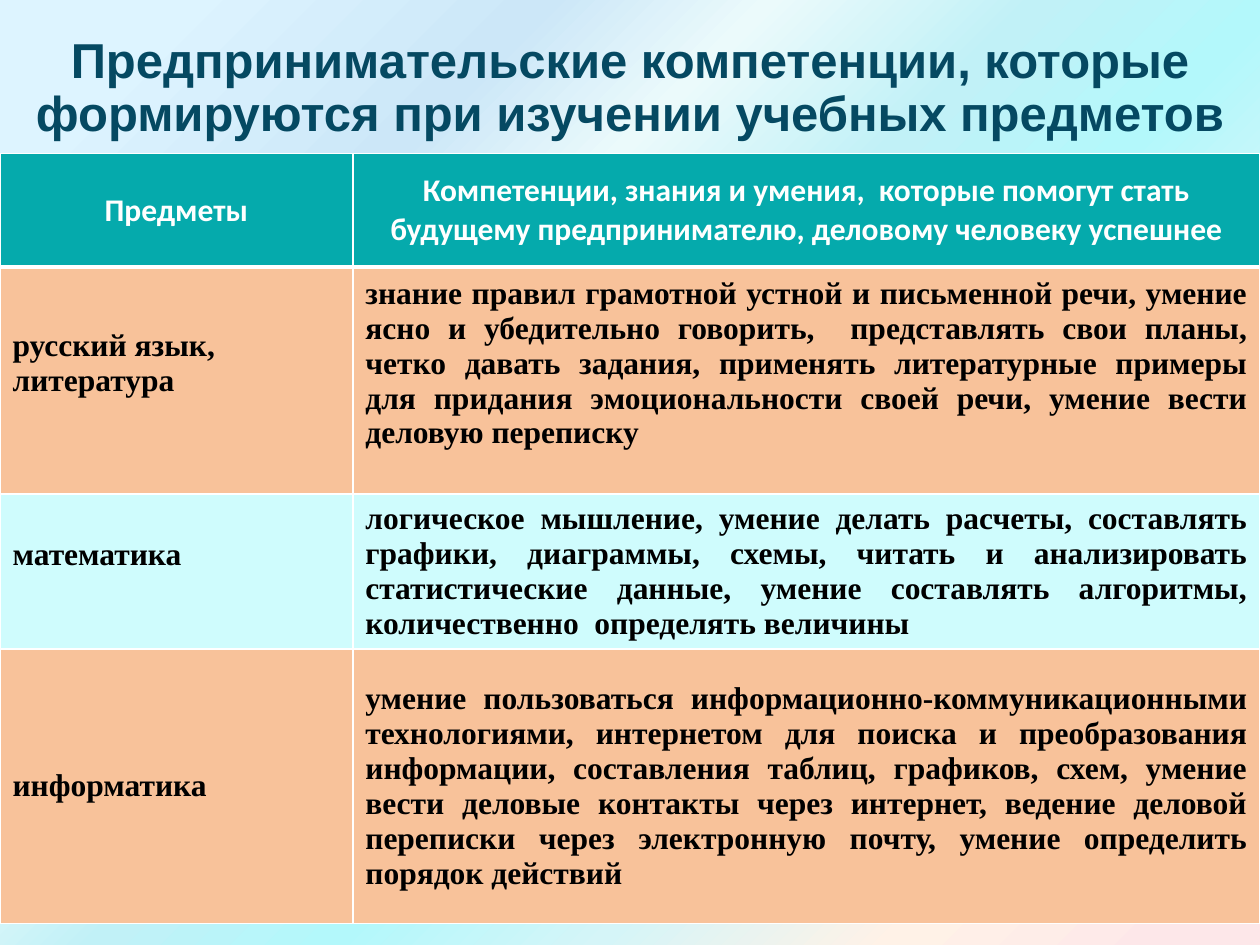
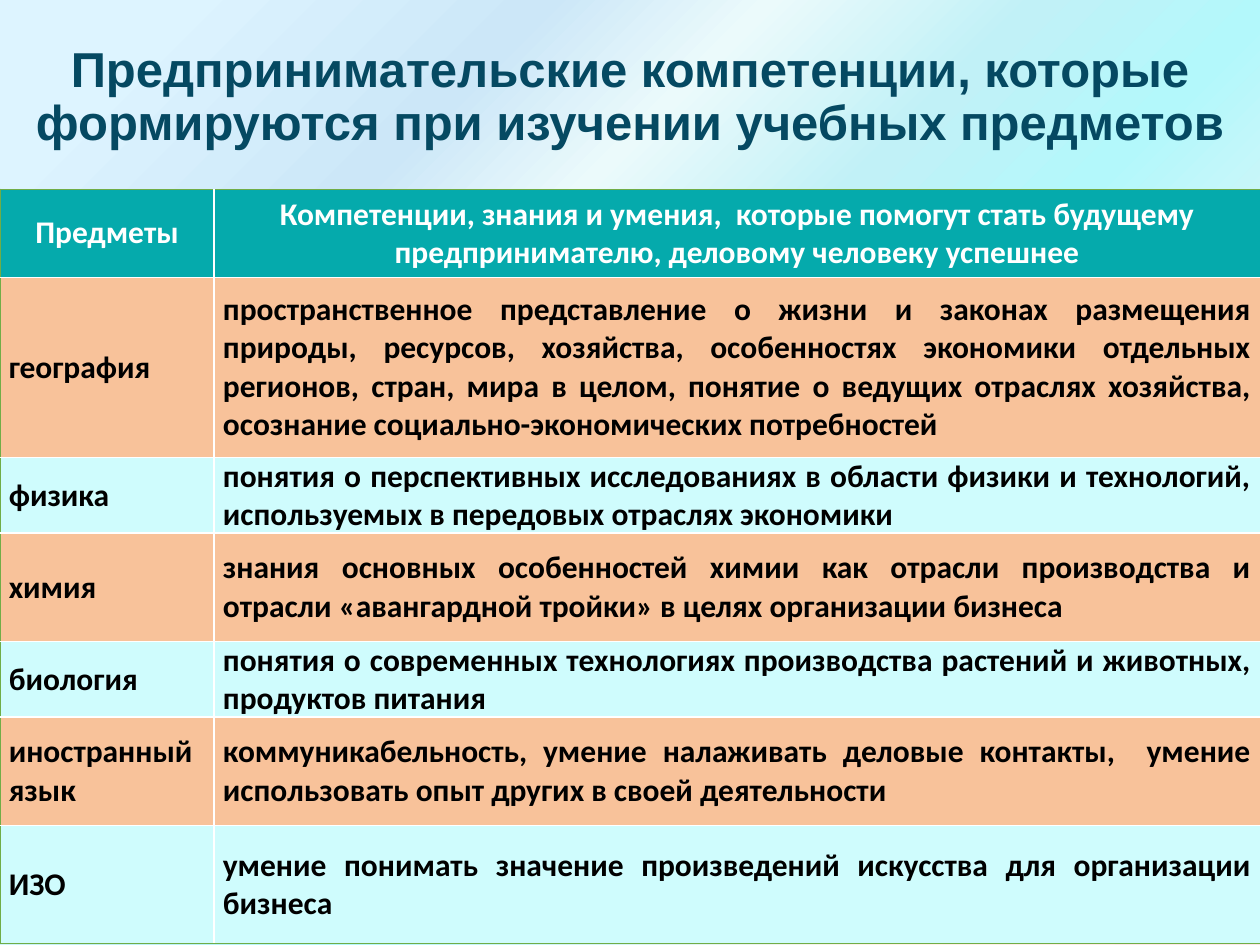
from dataclasses import dataclass

from lxml.etree import SubElement
from pptx import Presentation
from pptx.dml.color import RGBColor
from pptx.enum.text import MSO_ANCHOR, PP_ALIGN
from pptx.oxml.ns import qn
from pptx.util import Inches, Pt


@dataclass(frozen=True)
class Theme:
    title: str = "054962"
    header: str = "05AAAC"
    odd_row: str = "F8C29A"
    even_row: str = "CFFCFD"
    light: str = "FFFFFF"
    dark: str = "000000"
    edge: str = "70AD47"
    title_size: int = 28
    table_size: int = 18
    title_font: str = "Arial"
    table_font: str = "Calibri"
    serif_font: str = "Times New Roman"
    background: tuple = (
        (8, "DDF4FF"), (25, "CCE7F8"), (35, "EBFAFB"), (47, "C1F1F7"),
        (58, "B3F8FB"), (70, "D5F5F8"), (83, "FFF2E7"), (96, "FDE7E9"),
    )
    background_angle: int = 45


THEME = Theme()
TITLE = "Предпринимательские компетенции, которые формируются при изучении учебных предметов"
HEADINGS = (
    "Предметы",
    "Компетенции, знания и умения,  которые помогут стать будущему "
    "предпринимателю, деловому человеку успешнее",
)
LANGUAGE_AND_MATHS = [
    ("русский язык, литература",
     "знание правил грамотной устной и письменной речи, умение ясно и убедительно "
     "говорить,  представлять свои планы, четко давать задания, применять "
     "литературные примеры для придания эмоциональности своей речи, умение вести "
     "деловую переписку"),
    ("математика",
     "логическое мышление, умение делать расчеты, составлять графики, диаграммы, "
     "схемы, читать и анализировать статистические данные, умение составлять "
     "алгоритмы, количественно  определять величины"),
    ("информатика",
     "умение пользоваться информационно-коммуникационными технологиями, интернетом "
     "для поиска и преобразования информации, составления таблиц, графиков, схем, "
     "умение вести деловые контакты через интернет, ведение деловой переписки через "
     "электронную почту, умение определить порядок действий"),
]
SCIENCE_AND_ARTS = [
    ("география",
     "пространственное представление о жизни и законах размещения природы, ресурсов, "
     "хозяйства, особенностях экономики отдельных регионов, стран, мира в целом, "
     "понятие о ведущих отраслях хозяйства, осознание социально-экономических "
     "потребностей"),
    ("физика",
     "понятия о перспективных исследованиях в области физики и технологий, "
     "используемых в передовых отраслях экономики"),
    ("химия",
     "знания основных особенностей химии как отрасли производства и отрасли "
     "«авангардной тройки» в целях организации бизнеса"),
    ("биология",
     "понятия о современных технологиях производства растений и животных, "
     "продуктов питания"),
    ("иностранный язык",
     "коммуникабельность, умение налаживать деловые контакты,  умение использовать "
     "опыт других в своей деятельности"),
    ("ИЗО", "умение понимать значение произведений искусства для организации бизнеса"),
]


def write_text(frame, text, *, font, size, color, align, spacing=None):
    paragraph = frame.paragraphs[0]
    paragraph.alignment = align
    if spacing:
        paragraph.line_spacing = spacing
    run = paragraph.add_run()
    run.text = text
    run.font.name = font
    run.font.size = Pt(size)
    run.font.bold = True
    run.font.color.rgb = RGBColor.from_string(color)


def paint_background(slide):
    slide.background.fill.gradient()
    gradient = slide.element.find(".//" + qn("a:gradFill"))
    for child in list(gradient):
        gradient.remove(child)
    stops = SubElement(gradient, qn("a:gsLst"))
    for percent, color in THEME.background:
        stop = SubElement(stops, qn("a:gs"), pos=str(percent * 1000))
        SubElement(stop, qn("a:srgbClr"), val=color)
    SubElement(gradient, qn("a:lin"), ang=str(THEME.background_angle * 60000), scaled="0")


def add_title(slide, top, height, anchor=MSO_ANCHOR.MIDDLE, top_inset=0.05):
    frame = slide.shapes.add_textbox(0, Inches(top), Inches(10), Inches(height)).text_frame
    frame.word_wrap = True
    frame.vertical_anchor = anchor
    frame.margin_top = Inches(top_inset)
    write_text(frame, TITLE, font=THEME.title_font, size=THEME.title_size,
               color=THEME.title, align=PP_ALIGN.CENTER, spacing=0.9)


def set_borders(cell, borders):
    """Draw the sides given as {side: (colour, points)}; they must precede the fill."""
    properties = cell._tc.get_or_add_tcPr()
    for index, side in enumerate("LRTB"):
        color, points = borders[side]
        line = SubElement(properties, qn(f"a:ln{side}"), w=str(Pt(points)))
        fill = SubElement(line, qn("a:solidFill"))
        SubElement(fill, qn("a:srgbClr"), val=color)
        properties.insert(index, line)


def set_margins(cell, side, top, bottom):
    cell.margin_left = cell.margin_right = Inches(side)
    cell.margin_top, cell.margin_bottom = Inches(top), Inches(bottom)


def add_subject_table(slide, subjects, *, top, columns, heights, body_font,
                      body_margins, outer, header_rule=1, raised=()):
    """Header plus one row per subject; raised maps (row, column) to a bottom margin."""
    table = slide.shapes.add_table(
        len(heights), len(columns), 0, Inches(top),
        Inches(sum(columns)), Inches(sum(heights))).table
    table.first_row = table.horz_banding = False
    for column, width in zip(table.columns, columns):
        column.width = Inches(width)
    inner = (THEME.light, 1)
    last_row, last_column = len(heights) - 1, len(columns) - 1

    for r, texts in enumerate([HEADINGS, *subjects]):
        table.rows[r].height = Inches(heights[r])
        header = r == 0
        row_fill = THEME.header if header else THEME.odd_row if r % 2 else THEME.even_row
        for c, text in enumerate(texts):
            cell = table.cell(r, c)
            cell.vertical_anchor = MSO_ANCHOR.MIDDLE
            side, top_margin, bottom = (0.1, 0.05, 0.05) if header else body_margins
            set_margins(cell, side, top_margin, dict(raised).get((r, c), bottom))
            cell.fill.solid()
            cell.fill.fore_color.rgb = RGBColor.from_string(row_fill)
            set_borders(cell, {
                "L": outer if c == 0 else inner,
                "R": outer if c == last_column else inner,
                "T": outer if header else inner,
                "B": (THEME.light, header_rule) if header
                     else outer if r == last_row else inner,
            })
            body_align = PP_ALIGN.JUSTIFY if c else PP_ALIGN.LEFT
            write_text(cell.text_frame, text,
                       font=THEME.table_font if header else body_font,
                       size=THEME.table_size,
                       color=THEME.light if header else THEME.dark,
                       align=PP_ALIGN.CENTER if header else body_align)


def add_slide(presentation):
    slide = presentation.slides.add_slide(presentation.slide_layouts[6])
    paint_background(slide)
    return slide


def main():
    presentation = Presentation()
    presentation.slide_width, presentation.slide_height = Inches(10), Inches(7.5)

    slide = add_slide(presentation)
    add_subject_table(
        slide, LANGUAGE_AND_MATHS, top=1.22, columns=(2.8, 7.2),
        heights=(0.9, 1.8, 1.23, 2.18), body_font=THEME.serif_font,
        body_margins=(0.1, 0.05, 0.05), outer=(THEME.light, 1), header_rule=3,
        raised={(1, 0): 0.32, (1, 1): 0.32, (2, 0): 0.32})
    add_title(slide, 0.21, 1.37, MSO_ANCHOR.TOP, top_inset=0.08)

    slide = add_slide(presentation)
    add_subject_table(
        slide, SCIENCE_AND_ARTS, top=1.5, columns=(1.7, 8.3),
        heights=(0.67, 1.43, 0.57, 0.86, 0.57, 0.86, 0.94), body_font=THEME.table_font,
        body_margins=(0.07, 0, 0), outer=(THEME.edge, 0.5))
    add_title(slide, 0.05, 1.45)

    presentation.save("out.pptx")


if __name__ == "__main__":
    main()
